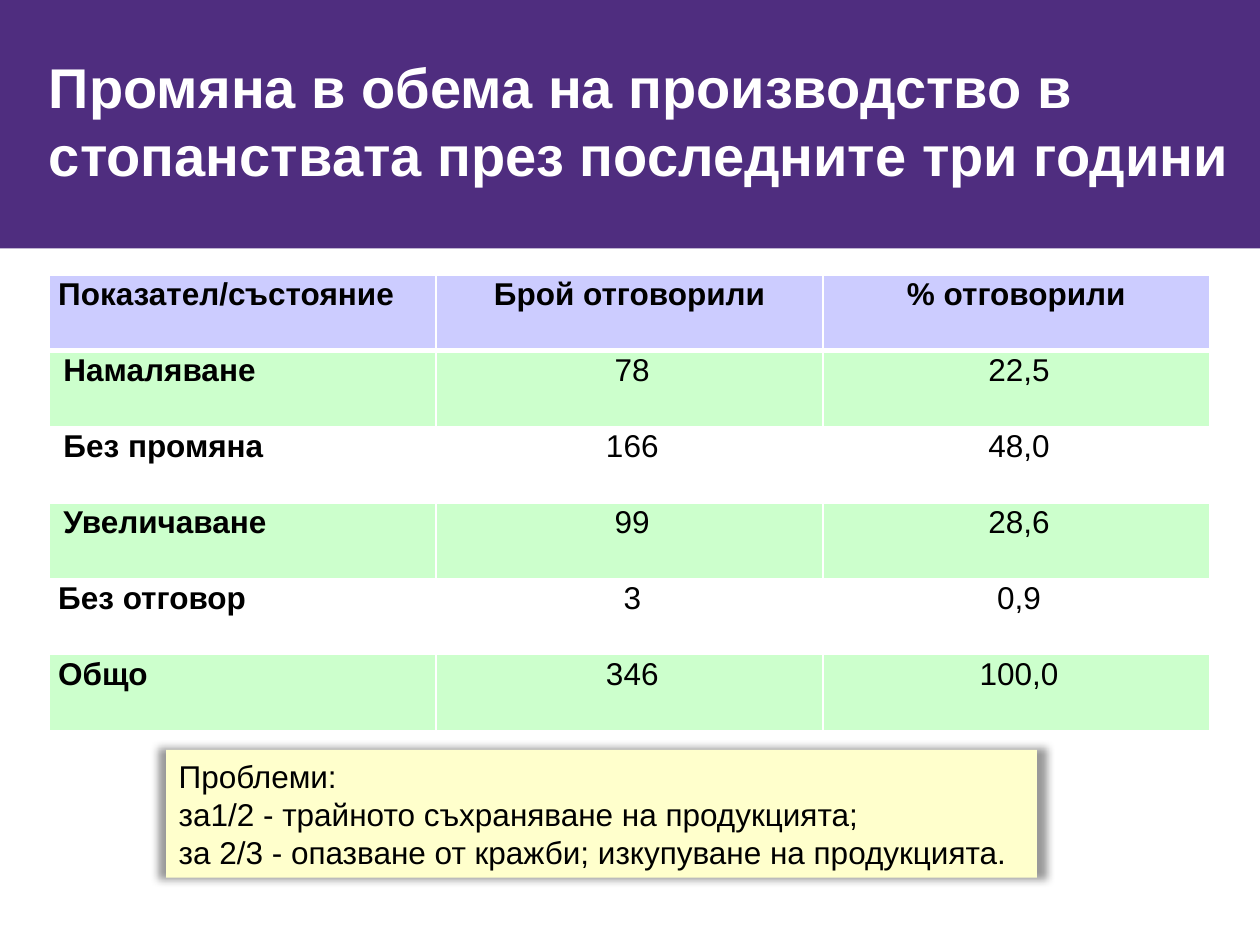
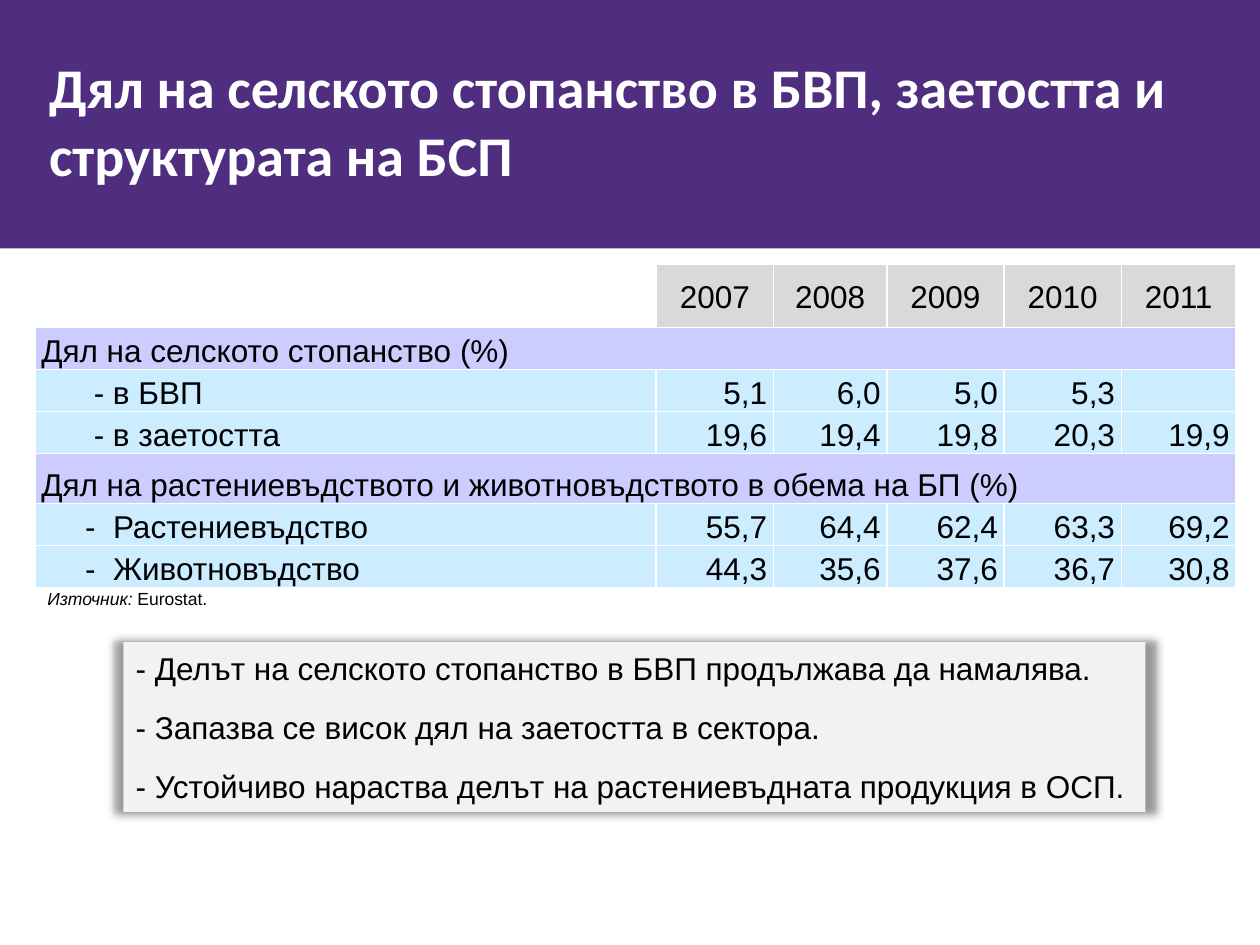
from lxml import etree
from pptx import Presentation
from pptx.dml.color import RGBColor
from pptx.enum.shapes import MSO_SHAPE
from pptx.enum.text import MSO_ANCHOR, PP_ALIGN
from pptx.oxml import parse_xml
from pptx.oxml.ns import nsdecls, qn
from pptx.util import Pt

RECTANGLE = MSO_SHAPE.RECTANGLE
TOP, MIDDLE, BOTTOM = MSO_ANCHOR.TOP, MSO_ANCHOR.MIDDLE, MSO_ANCHOR.BOTTOM
LEFT, CENTER, RIGHT = PP_ALIGN.LEFT, PP_ALIGN.CENTER, PP_ALIGN.RIGHT

COLORS = {
    "band": "4F2D7F",
    "white": "FFFFFF",
    "black": "000000",
    "lavender": "CCCCFF",
    "green": "CCFFCC",
    "blue": "CCECFF",
    "gray": "D9D9D9",
    "yellow_note": "FFFFCC",
    "gray_note": "F2F2F2",
}
BODY_FONT = "Arial"
BODY_SIZE = 18
TABLE_SPACING = 1.07

CHANGE_TITLE = "Промяна в обема на производство в стопанствата през последните три години"
CHANGE_HEADER = ("Показател/състояние", "Брой отговорили", "% отговорили")
CHANGE_ROWS = [
    ("Намаляване", "78", "22,5"),
    ("Без промяна", "166", "48,0"),
    ("Увеличаване", "99", "28,6"),
    ("Без отговор", "3", "0,9"),
    ("Общо", "346", "100,0"),
]
INDENTED_LABELS = ("Намаляване", "Без промяна", "Увеличаване")
PROBLEMS = [
    "Проблеми:",
    "за1/2 - трайното съхраняване на продукцията;",
    "за 2/3 - опазване от кражби; изкупуване на продукцията.",
]

SHARE_TITLE = "Дял на селското стопанство в БВП, заетостта и структурата на БСП"
YEARS = ("", "2007", "2008", "2009", "2010", "2011")
SHARE_ROWS = [
    ("Дял на селското стопанство (%)",),
    ("- в БВП", "5,1", "6,0", "5,0", "5,3", ""),
    ("- в заетостта", "19,6", "19,4", "19,8", "20,3", "19,9"),
    ("Дял на растениевъдството и животновъдството в обема на БП (%)",),
    ("-\tРастениевъдство", "55,7", "64,4", "62,4", "63,3", "69,2"),
    ("-\tЖивотновъдство", "44,3", "35,6", "37,6", "36,7", "30,8"),
]
SHARE_WIDTHS = (355, 67, 64.8, 67, 67, 65.5)
SHARE_HEIGHTS = (36, 24, 24, 24, 28.5, 24, 24)
SOURCE = ("Източник: ", "Eurostat.")
CONCLUSIONS = [
    "- Делът на селското стопанство в БВП продължава да намалява.",
    "- Запазва се висок дял на заетостта в сектора.",
    "- Устойчиво нараства делът на растениевъдната продукция в ОСП.",
]


def rgb(name):
    return RGBColor.from_string(COLORS[name])


def style_font(font, size=BODY_SIZE, name=BODY_FONT, color="black", bold=False):
    font.size = Pt(size)
    font.name = name
    font.bold = bold
    font.color.rgb = rgb(color)


def set_margins(target, left, top, right, bottom):
    target.margin_left, target.margin_top = Pt(left), Pt(top)
    target.margin_right, target.margin_bottom = Pt(right), Pt(bottom)


def add_rectangle(slide, left, top, width, height, color):
    shape = slide.shapes.add_shape(RECTANGLE, Pt(left), Pt(top), Pt(width), Pt(height))
    shape.shadow.inherit = False
    shape.fill.solid()
    shape.fill.fore_color.rgb = rgb(color)
    shape.line.fill.background()
    return shape


def add_titled_slide(presentation, title, font_name, title_width):
    slide = presentation.slides.add_slide(presentation.slide_layouts[6])
    slide.background.fill.solid()
    slide.background.fill.fore_color.rgb = rgb("white")
    add_rectangle(slide, 0, 0, 720, 142, "band")
    text_frame = slide.shapes.add_textbox(Pt(28), Pt(28), Pt(title_width), Pt(113)).text_frame
    text_frame.word_wrap = True
    set_margins(text_frame, 0, 2, 0, 0)
    text_frame.text = title
    paragraph = text_frame.paragraphs[0]
    paragraph.line_spacing = Pt(38.5)
    style_font(paragraph.runs[0].font, 32, font_name, "white", True)
    return slide


def add_note(slide, left, top, width, height, color, lines, gap=0):
    shape = add_rectangle(slide, left, top, width, height, color)
    effects = shape._element.spPr.find(qn("a:effectLst"))
    effects.append(parse_xml(
        f'<a:outerShdw {nsdecls("a")} blurRad="{Pt(5)}" sx="102000" sy="102000" algn="ctr" '
        f'rotWithShape="0"><a:srgbClr val="{COLORS["black"]}"><a:alpha val="40000"/>'
        '</a:srgbClr></a:outerShdw>'))
    text_frame = shape.text_frame
    text_frame.word_wrap = True
    text_frame.vertical_anchor = MIDDLE
    text_frame.text = "\n".join(lines)
    for index, paragraph in enumerate(text_frame.paragraphs):
        paragraph.alignment = LEFT
        paragraph.space_before = Pt(gap if index else 0)
        style_font(paragraph.runs[0].font)


def add_plain_table(slide, left, top, widths, heights):
    table = slide.shapes.add_table(len(heights), len(widths), Pt(left), Pt(top),
                                   Pt(sum(widths)), Pt(sum(heights))).table
    table.first_row = table.horz_banding = False
    for column, width in zip(table.columns, widths):
        column.width = Pt(width)
    for row, height in zip(table.rows, heights):
        row.height = Pt(height)
    return table


def fill_cell(cell, text, color, alignment, anchor=TOP, margin=5, bold=False,
              indent=0, hanging=0, bottom_border=1):
    set_margins(cell, margin, 0, margin, 0)
    cell.vertical_anchor = anchor
    cell.text = text
    paragraph = cell.text_frame.paragraphs[0]
    properties = paragraph._p.get_or_add_pPr()
    properties.set("marL", str(Pt(indent + hanging)))
    properties.set("indent", str(Pt(-hanging)))
    paragraph.alignment = alignment
    paragraph.line_spacing = TABLE_SPACING
    for run in paragraph.runs:
        style_font(run.font, bold=bold)
    cell_properties = cell._tc.get_or_add_tcPr()
    for side in "LRTB":
        width = bottom_border if side == "B" else 1
        line = etree.SubElement(cell_properties, qn(f"a:ln{side}"), w=str(Pt(width)))
        solid = etree.SubElement(line, qn("a:solidFill"))
        etree.SubElement(solid, qn("a:srgbClr"), val=COLORS["white"])
    cell.fill.solid()
    cell.fill.fore_color.rgb = rgb(color)


def build_change_slide(presentation):
    slide = add_titled_slide(presentation, CHANGE_TITLE, BODY_FONT, 678)
    rows = [CHANGE_HEADER] + CHANGE_ROWS
    table = add_plain_table(slide, 28.3, 157, [221] * 3, [43.45] * len(rows))
    for row_index, row in enumerate(rows):
        header = row_index == 0
        color = "lavender" if header else ("green" if row_index % 2 else "white")
        for column_index, text in enumerate(row):
            label = column_index == 0
            indented = text in INDENTED_LABELS or not (header or label)
            fill_cell(table.cell(row_index, column_index), text, color,
                      LEFT if label else CENTER, bold=header or label,
                      indent=3 if indented else 0, bottom_border=3 if header else 1)
    add_note(slide, 95, 428.5, 497.5, 73, "yellow_note", PROBLEMS)


def build_share_slide(presentation):
    slide = add_titled_slide(presentation, SHARE_TITLE, "Calibri", 663)
    table = add_plain_table(slide, 20, 151.2, SHARE_WIDTHS, SHARE_HEIGHTS)
    for column_index, year in enumerate(YEARS):
        fill_cell(table.cell(0, column_index), year, "gray" if year else "white",
                  CENTER, MIDDLE, 3.6)
    for row_index, row in enumerate(SHARE_ROWS, 1):
        first = table.cell(row_index, 0)
        if len(row) == 1:
            first.merge(table.cell(row_index, len(YEARS) - 1))
            fill_cell(first, row[0], "lavender", LEFT, BOTTOM, 3.6)
            continue
        tabbed = "\t" in row[0]
        fill_cell(first, row[0], "blue", LEFT, BOTTOM, 3.6,
                  indent=25 if tabbed else 30, hanging=16 if tabbed else 0)
        for column_index, value in enumerate(row[1:], 1):
            fill_cell(table.cell(row_index, column_index), value, "blue", RIGHT, BOTTOM, 3.6)
    source_box = slide.shapes.add_textbox(Pt(20), Pt(332.6), Pt(107), Pt(19.4))
    source_box.text_frame.word_wrap = False
    paragraph = source_box.text_frame.paragraphs[0]
    for text, italic in zip(SOURCE, (True, False)):
        run = paragraph.add_run()
        run.text = text
        style_font(run.font, 10)
        run.font.italic = italic
    add_note(slide, 70.5, 367, 584, 97, "gray_note", CONCLUSIONS, 12)


def main():
    presentation = Presentation()
    presentation.slide_width, presentation.slide_height = Pt(720), Pt(540)
    build_change_slide(presentation)
    build_share_slide(presentation)
    presentation.save("out.pptx")


if __name__ == "__main__":
    main()
